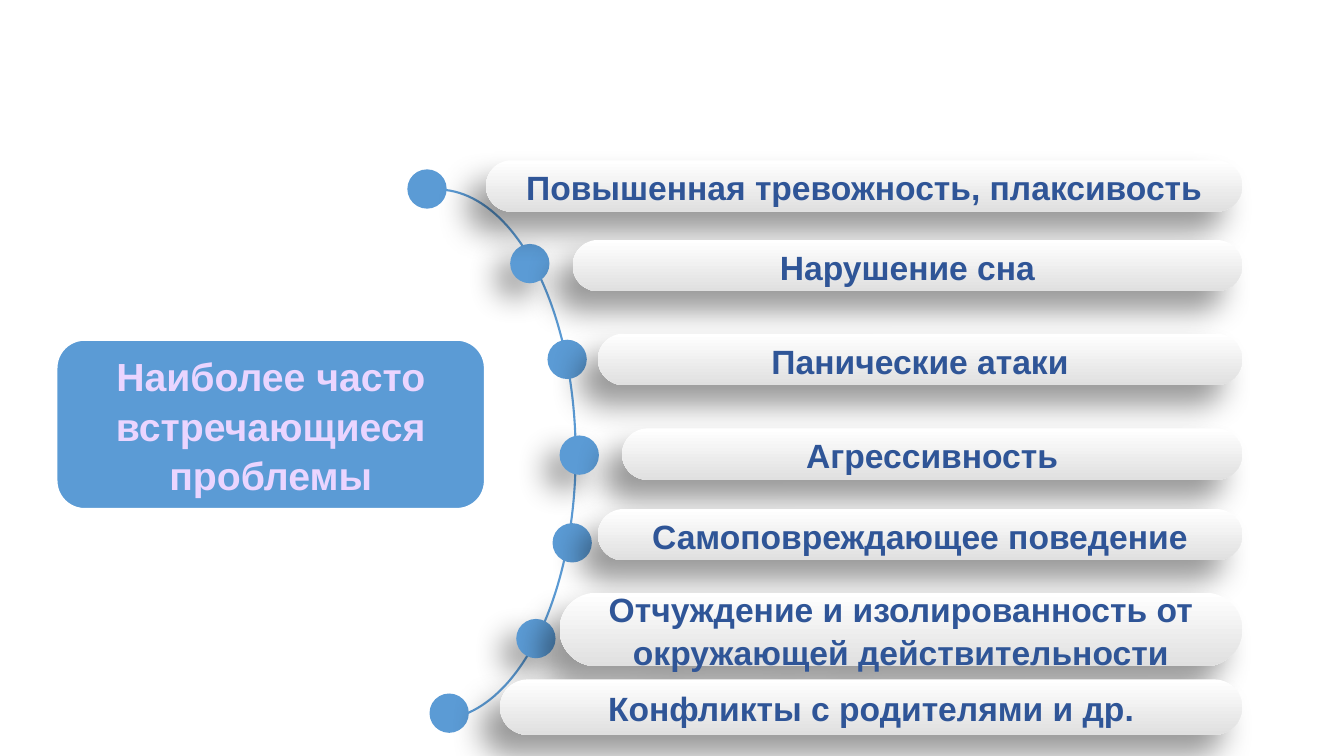
import pptx
import pptx.util
import pptx.dml.color
import pptx.enum.shapes
import pptx.enum.text
import pptx.oxml
import pptx.oxml.ns

Inches = pptx.util.Inches
Pt = pptx.util.Pt
MSO_SHAPE = pptx.enum.shapes.MSO_SHAPE

COLORS = {
    "blue": "5B9BD5",
    "white": "FFFFFF",
    "lilac": "EAD5FF",
    "navy": "2F5597",
    "silver": "E0E0E0",
    "shadow": "000000",
}
FONT = "Arial"
DOT_SIZE = 0.39
PILL_RIGHT = 12.32

# label, pill (left, top, height), dot (left, top), dot casts a shadow
PROBLEMS = [
    ("Повышенная тревожность, плаксивость", (4.82, 1.59, 0.51), (4.04, 1.68), False),
    ("Нарушение сна", (5.68, 2.38, 0.51), (5.06, 2.42), True),
    ("Панические атаки", (5.93, 3.31, 0.51), (5.43, 3.37), False),
    ("Агрессивность", (6.17, 4.25, 0.51), (5.55, 4.32), True),
    ("Самоповреждающее поведение", (5.93, 5.05, 0.51), (5.48, 5.19), False),
    ("Отчуждение и изолированность от окружающей действительности",
     (5.55, 5.88, 0.73), (5.12, 6.14), True),
    ("Конфликты с родителями и др.", (4.96, 6.74, 0.55), (4.26, 6.88), False),
]


def rgb(name):
    return pptx.dml.color.RGBColor.from_string(COLORS[name])


def add_plain_shape(slide, kind, left, top, width, height):
    """Add a preset shape without shadow or outline."""
    shape = slide.shapes.add_shape(
        kind, Inches(left), Inches(top), Inches(width), Inches(height))
    shape.shadow.inherit = False
    shape.line.fill.background()
    return shape


def fill_solid(shape, color):
    shape.fill.solid()
    shape.fill.fore_color.rgb = rgb(color)


def cast_shadow(shape, distance):
    """Give the shape a soft shadow to the lower left."""
    effects = shape._element.spPr.find(pptx.oxml.ns.qn("a:effectLst"))
    effects.append(pptx.oxml.parse_xml(
        f'<a:outerShdw {pptx.oxml.ns.nsdecls("a")} blurRad="{Pt(22)}" '
        f'dist="{Pt(distance)}" dir="8100000" algn="tr" rotWithShape="0">'
        f'<a:srgbClr val="{COLORS["shadow"]}"><a:alpha val="40000"/></a:srgbClr>'
        '</a:outerShdw>'))


def write_label(shape, text, size, color, spacing):
    frame = shape.text_frame
    frame.text = text
    frame.word_wrap = True
    frame.vertical_anchor = pptx.enum.text.MSO_ANCHOR.MIDDLE
    paragraph = frame.paragraphs[0]
    paragraph.alignment = pptx.enum.text.PP_ALIGN.CENTER
    paragraph.line_spacing = spacing
    font = paragraph.runs[0].font
    font.name = FONT
    font.size = Pt(size)
    font.bold = True
    font.color.rgb = rgb(color)


def add_topic(slide, left, top, width, height):
    topic = add_plain_shape(
        slide, MSO_SHAPE.ROUNDED_RECTANGLE, left, top, width, height)
    fill_solid(topic, "blue")
    topic.line.color.rgb = rgb("white")
    topic.line.width = Pt(1.5)
    write_label(topic, "Наиболее часто встречающиеся проблемы", 28, "lilac", 1.05)


def add_curve(slide, left, top, width, height):
    curve = add_plain_shape(slide, MSO_SHAPE.ARC, left, top, width, height)
    curve.adjustments[0] = 161.666
    curve.adjustments[1] = 54.22
    curve.fill.background()
    curve.line.color.rgb = rgb("blue")
    curve.line.width = Pt(1.5)


def add_dot(slide, left, top, shaded):
    dot = add_plain_shape(slide, MSO_SHAPE.OVAL, left, top, DOT_SIZE, DOT_SIZE)
    fill_solid(dot, "blue")
    if shaded:
        cast_shadow(dot, 15)


def add_pill(slide, label, left, top, height):
    pill = add_plain_shape(slide, MSO_SHAPE.ROUNDED_RECTANGLE,
                           left, top, PILL_RIGHT - left, height)
    pill.adjustments[0] = 0.5
    pill.fill.gradient()
    pill.fill.gradient_angle = 270
    for stop, color in zip(pill.fill.gradient_stops, ("white", "silver")):
        stop.color.rgb = rgb(color)
    cast_shadow(pill, 20)
    write_label(pill, label, 24, "navy", 1.07)


def main():
    deck = pptx.Presentation()
    deck.slide_width = Inches(13.33)
    deck.slide_height = Inches(7.5)
    slide = deck.slides.add_slide(deck.slide_layouts[6])
    add_topic(slide, 0.56, 3.37, 4.25, 1.68)
    add_curve(slide, 2.96, 1.88, 2.75, 5.26)
    for _, _, dot_place, shaded in PROBLEMS:
        add_dot(slide, *dot_place, shaded)
    for label, pill_place, _, _ in PROBLEMS:
        add_pill(slide, label, *pill_place)
    deck.save("out.pptx")


if __name__ == "__main__":
    main()
